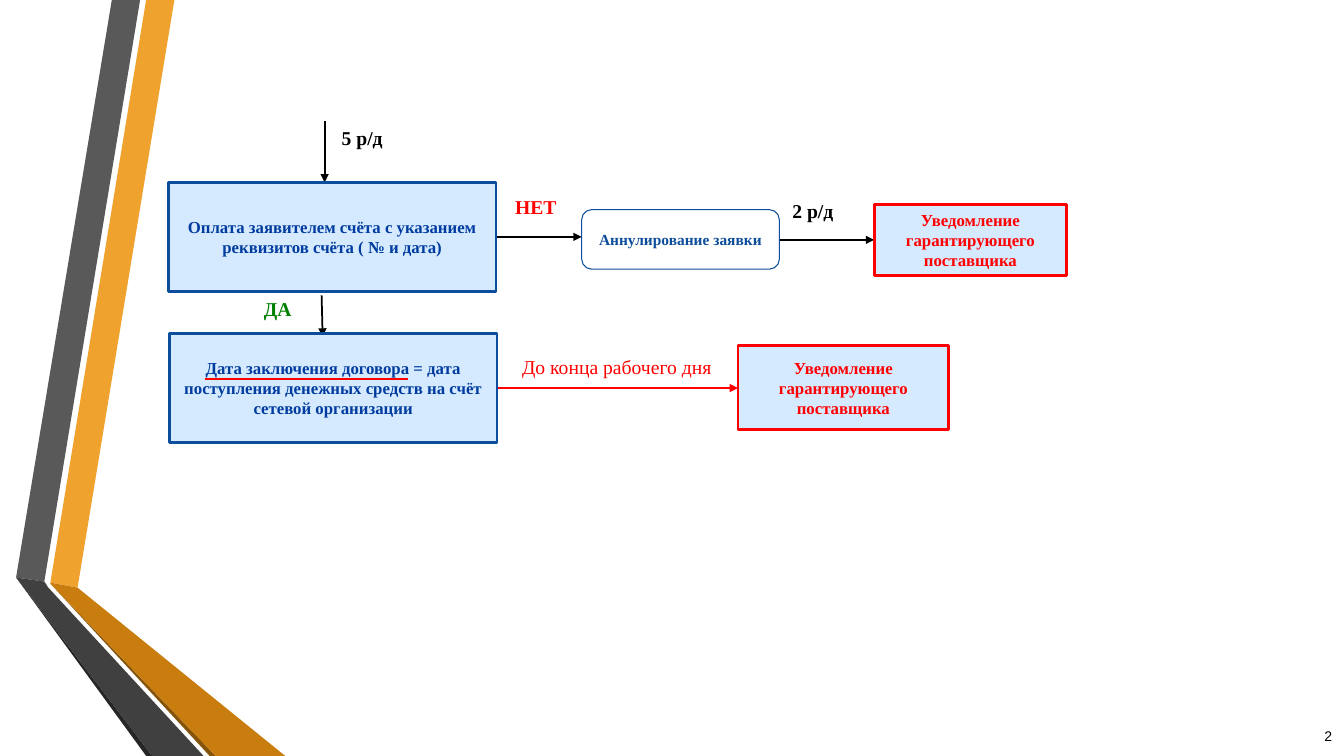
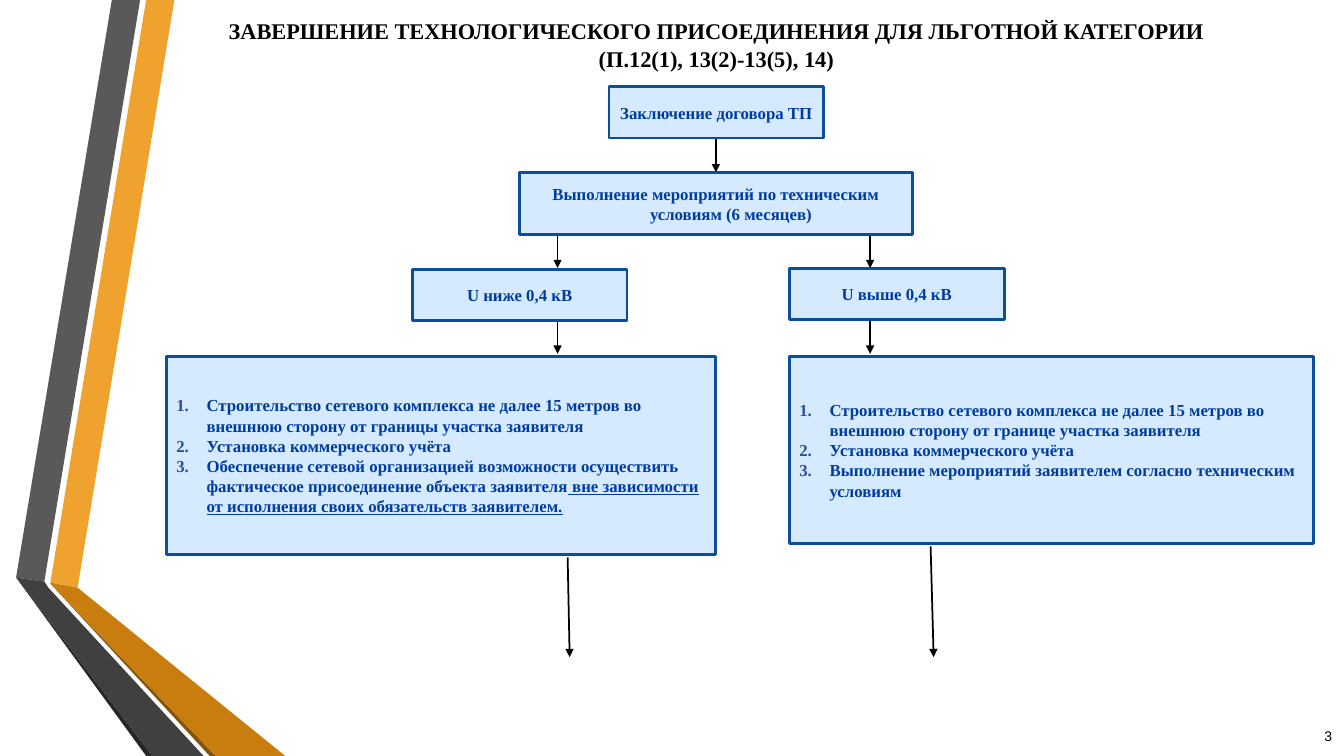
from collections import namedtuple
from dataclasses import dataclass

from lxml import etree
from pptx import Presentation, util as u
from pptx.dml.color import RGBColor
from pptx.enum import shapes, text
from pptx.oxml.ns import qn


@dataclass(frozen=True)
class Theme:
    font: str = "Times New Roman"
    number_font: str = "Arial"
    ink: str = "000000"
    blue: str = "003CA0"
    border: str = "0D4E9C"
    marker: str = "2A4E9E"
    panel: str = "D5EAFF"
    white: str = "FFFFFF"
    red: str = "FF0000"
    green: str = "008000"
    title: float = 16
    label: float = 14
    body: float = 12
    small: float = 11
    number: float = 10
    frame: float = 2
    thin: float = 0.75
    stroke: float = 1.25
    hanging: float = 0.3


THEME = Theme()
WIDTH, HEIGHT = 13.33, 7.5
CENTER, LEFT, RIGHT = text.PP_ALIGN.CENTER, text.PP_ALIGN.LEFT, text.PP_ALIGN.RIGHT


class Area(namedtuple("Area", "left top width height")):
    @property
    def right(self):
        return self.left + self.width

    @property
    def bottom(self):
        return self.top + self.height

    @property
    def middle(self):
        return self.top + self.height / 2


# Background ribbons, back to front: colour and outline
RIBBONS = [
    ("F0A22E", [(0.5, 5.78), (0.77, 5.83), (1.73, 0), (1.45, 0)]),
    ("595959", [(1.39, 0), (1.11, 0), (0.16, 5.73), (0.44, 5.77)]),
    ("262626", [(0.16, 5.73), (1.45, HEIGHT), (1.51, HEIGHT)]),
    ("85540A", [(0.5, 5.79), (2.08, HEIGHT), (2.14, HEIGHT)]),
    ("C87D0E", [(0.5, 5.79), (2.14, HEIGHT), (2.83, HEIGHT), (0.77, 5.83), (0.5, 5.78)]),
    ("404040", [(2.02, HEIGHT), (0.48, 5.83), (0.44, 5.77), (0.16, 5.73), (1.51, HEIGHT)]),
]

# Slide 2: payment of the invoice
PAYMENT = Area(1.67, 1.81, 3.25, 1.08)
CONTRACT_DATE = PAYMENT._replace(left=1.68, top=3.31)
CANCELLATION = Area(5.77, 2.08, 1.96, 0.59)
CANCEL_NOTICE = Area(8.67, 2.03, 1.91, 0.7)
CONTRACT_NOTICE = Area(7.32, 3.43, 2.09, 0.83)

NOTICE = ["Уведомление", "гарантирующего", "поставщика"]
NOTICE_STYLE = dict(border=THEME.red, color=THEME.red, hanging=True)
PAYMENT_BOXES = [
    (PAYMENT, ["Оплата заявителем счёта с указанием реквизитов счёта ( № и дата)"], {}),
    (CANCELLATION, ["Аннулирование заявки"],
     dict(kind=shapes.MSO_SHAPE.ROUNDED_RECTANGLE, fill=THEME.white, width=THEME.thin,
          color=THEME.border, size=THEME.small, hanging=True, wrap=False)),
    (CANCEL_NOTICE, NOTICE, NOTICE_STYLE),
    (CONTRACT_DATE, ["Дата заключения договора = дата поступления денежных средств "
                     "на счёт сетевой организации"], {}),
    (CONTRACT_NOTICE, NOTICE, NOTICE_STYLE),
]
PAYMENT_ARROWS = [
    ((3.22, 1.2), (3.22, PAYMENT.top), THEME.ink),
    ((PAYMENT.right, PAYMENT.middle), (CANCELLATION.left, PAYMENT.middle), THEME.ink),
    ((CANCELLATION.right, CANCEL_NOTICE.middle),
     (CANCEL_NOTICE.left, CANCEL_NOTICE.middle), THEME.ink),
    ((3.19, 2.93), (3.2, 3.34), THEME.ink),
    ((CONTRACT_DATE.right, CONTRACT_DATE.middle),
     (CONTRACT_NOTICE.left, CONTRACT_DATE.middle), THEME.red),
]
PAYMENT_LABELS = [
    ("5 р/д", (3.29, 1.2, 0.91), THEME.ink, True),
    ("НЕТ", (5.01, 1.88, 0.76), THEME.red, True),
    ("2 р/д", (7.76, 1.92, 0.91), THEME.ink, True),
    ("ДА", (2.52, 2.9, 0.63), THEME.green, True),
    ("До конца рабочего дня", (5.08, 3.47, 2.1), THEME.red, False),
]
DATE_UNDERLINE = ((2.03, 3.76), (4.05, 3.76), THEME.red)

# Slide 3: completion of the connection
TITLE = ("ЗАВЕРШЕНИЕ ТЕХНОЛОГИЧЕСКОГО ПРИСОЕДИНЕНИЯ ДЛЯ ЛЬГОТНОЙ КАТЕГОРИИ\v"
         "(П.12(1), 13(2)-13(5), 14)")
SIGNING = Area(6.04, 0.86, 2.13, 0.51)
MEASURES = Area(5.15, 1.71, 3.9, 0.62)
LOW_VOLTAGE = SIGNING._replace(left=4.09, top=2.67)
HIGH_VOLTAGE = SIGNING._replace(left=7.83, top=2.66)
LOW_STEPS = Area(1.65, 3.54, 5.45, 1.96)
HIGH_STEPS = Area(HIGH_VOLTAGE.left, LOW_STEPS.top, 5.2, 1.85)

METERING = "Установка коммерческого учёта"
COMPLETION_BOXES = [
    (SIGNING, ["Заключение договора ТП"], dict(hanging=True)),
    (MEASURES, ["Выполнение мероприятий по техническим условиям (6 месяцев)"],
     dict(hanging=True)),
    (LOW_VOLTAGE, ["U ниже 0,4 кВ"], dict(hanging=True)),
    (HIGH_VOLTAGE, ["U выше 0,4 кВ"], dict(hanging=True)),
    (LOW_STEPS, [
        "Строительство сетевого комплекса не далее 15 метров во внешнюю сторону "
        "от границы участка заявителя",
        METERING,
        ("Обеспечение сетевой организацией возможности осуществить фактическое "
         "присоединение объекта заявителя",
         " вне зависимости от исполнения своих обязательств заявителем."),
    ], dict(numbered=True, align=LEFT)),
    (HIGH_STEPS, [
        "Строительство сетевого комплекса не далее 15 метров во внешнюю сторону "
        "от границе участка заявителя",
        METERING,
        "Выполнение мероприятий заявителем согласно техническим условиям",
    ], dict(numbered=True, align=LEFT)),
]
BRANCHES = (5.53, 8.63)
COMPLETION_ARROWS = [
    ((7.1, SIGNING.bottom), (7.1, MEASURES.top), THEME.ink),
    *[((x, start), (x, end), THEME.ink) for x in BRANCHES
      for start, end in ((MEASURES.bottom, HIGH_VOLTAGE.top),
                         (LOW_VOLTAGE.bottom, 3.51))],
    ((5.63, 5.53), (5.65, 6.52), THEME.ink),
    ((9.23, 5.42), (9.26, 6.52), THEME.ink),
]


def inches(*lengths):
    return [u.Inches(length) for length in lengths]


def rgb(code):
    return RGBColor.from_string(code)


def write(box, paragraphs, *, size=THEME.body, color=THEME.blue, bold=True, font=THEME.font,
          align=CENTER, anchor=text.MSO_ANCHOR.MIDDLE, wrap=True, hanging=False,
          numbered=False, spacing=None):
    """Fill a shape; in a paragraph given as a tuple, the second part is underlined."""
    frame = box.text_frame
    frame.word_wrap = wrap
    frame.auto_size = text.MSO_AUTO_SIZE.NONE
    frame.vertical_anchor = anchor
    frame.margin_left = frame.margin_right = u.Inches(0.1)
    frame.margin_top = frame.margin_bottom = u.Inches(0.05)
    for index, content in enumerate(paragraphs):
        para = frame.add_paragraph() if index else frame.paragraphs[0]
        para.alignment = align
        if spacing:
            para.line_spacing = spacing
        if hanging or numbered:
            indent = u.Inches(THEME.hanging)
            props = para._p.get_or_add_pPr()
            props.set("marL", str(indent))
            props.set("indent", str(-indent))
            if numbered:
                tint = etree.SubElement(props, qn("a:buClr"))
                etree.SubElement(tint, qn("a:srgbClr"), val=THEME.marker)
                etree.SubElement(props, qn("a:buAutoNum"), type="arabicPeriod")
        parts = (content,) if isinstance(content, str) else content
        for position, part in enumerate(parts):
            for line_index, line in enumerate(part.split("\v")):
                if line_index:
                    para.add_line_break()
                span = para.add_run()
                span.text = line
                span.font.name = font
                span.font.size = u.Pt(size)
                span.font.bold = bold
                span.font.color.rgb = rgb(color)
                if position:
                    span.font.underline = True


def add_box(page, area, paragraphs, *, kind=shapes.MSO_SHAPE.RECTANGLE, fill=THEME.panel,
            border=THEME.border, width=THEME.frame, **style):
    box = page.shapes.add_shape(kind, *inches(*area))
    box.shadow.inherit = False
    box.fill.solid()
    box.fill.fore_color.rgb = rgb(fill)
    box.line.color.rgb = rgb(border)
    box.line.width = u.Pt(width)
    write(box, paragraphs, **style)


def add_text(page, area, content, **style):
    write(page.shapes.add_textbox(*inches(*area)), [content], **style)


def add_line(page, start, end, color, arrow=True):
    line = page.shapes.add_connector(shapes.MSO_CONNECTOR.STRAIGHT, *inches(*start, *end))
    line.line.color.rgb = rgb(color)
    line.line.width = u.Pt(THEME.stroke)
    props = line.element.spPr
    if arrow:
        etree.SubElement(props.get_or_add_ln(), qn("a:tailEnd"), type="triangle")
    etree.SubElement(props, qn("a:effectLst"))


def add_ribbons(deck, page):
    """Build the ribbons on a page, then move them to the slide master."""
    tree = deck.slide_master.shapes.element
    for index, (color, outline) in enumerate(RIBBONS):
        start, *rest = [inches(*point) for point in outline]
        builder = page.shapes.build_freeform(*start)
        builder.add_line_segments(rest, close=True)
        ribbon = builder.convert_to_shape()
        ribbon.shadow.inherit = False
        ribbon.fill.solid()
        ribbon.fill.fore_color.rgb = rgb(color)
        ribbon.line.fill.background()
        ribbon.element.nvSpPr.cNvPr.set("id", str(100 + index))
        tree.insert(2 + index, ribbon.element)


def add_flow(page, number, arrows, boxes):
    for arrow in arrows:
        add_line(page, *arrow)
    for area, paragraphs, style in boxes:
        add_box(page, area, paragraphs, **style)
    add_text(page, (12.71, 7.1, 0.6, 0.4), str(number), font=THEME.number_font,
             size=THEME.number, color=THEME.ink, bold=False, align=RIGHT)


def main():
    deck = Presentation()
    deck.slide_width, deck.slide_height = inches(WIDTH, HEIGHT)
    title_only, blank = deck.slide_layouts[5], deck.slide_layouts[6]

    payment = deck.slides.add_slide(blank)
    add_ribbons(deck, payment)
    add_flow(payment, 2, PAYMENT_ARROWS, PAYMENT_BOXES)
    add_line(payment, *DATE_UNDERLINE, arrow=False)
    for content, place, color, bold in PAYMENT_LABELS:
        add_text(payment, (*place, 0.34), content, size=THEME.label, color=color, bold=bold,
                 align=LEFT, anchor=text.MSO_ANCHOR.TOP, wrap=bold)

    completion = deck.slides.add_slide(title_only)
    title = completion.shapes.title
    title.left, title.top, title.width, title.height = inches(1.51, 0.13, 11.19, 0.61)
    write(title, [TITLE], size=THEME.title, color=THEME.ink, spacing=1.05)
    add_flow(completion, 3, COMPLETION_ARROWS, COMPLETION_BOXES)

    deck.save("out.pptx")


if __name__ == "__main__":
    main()
